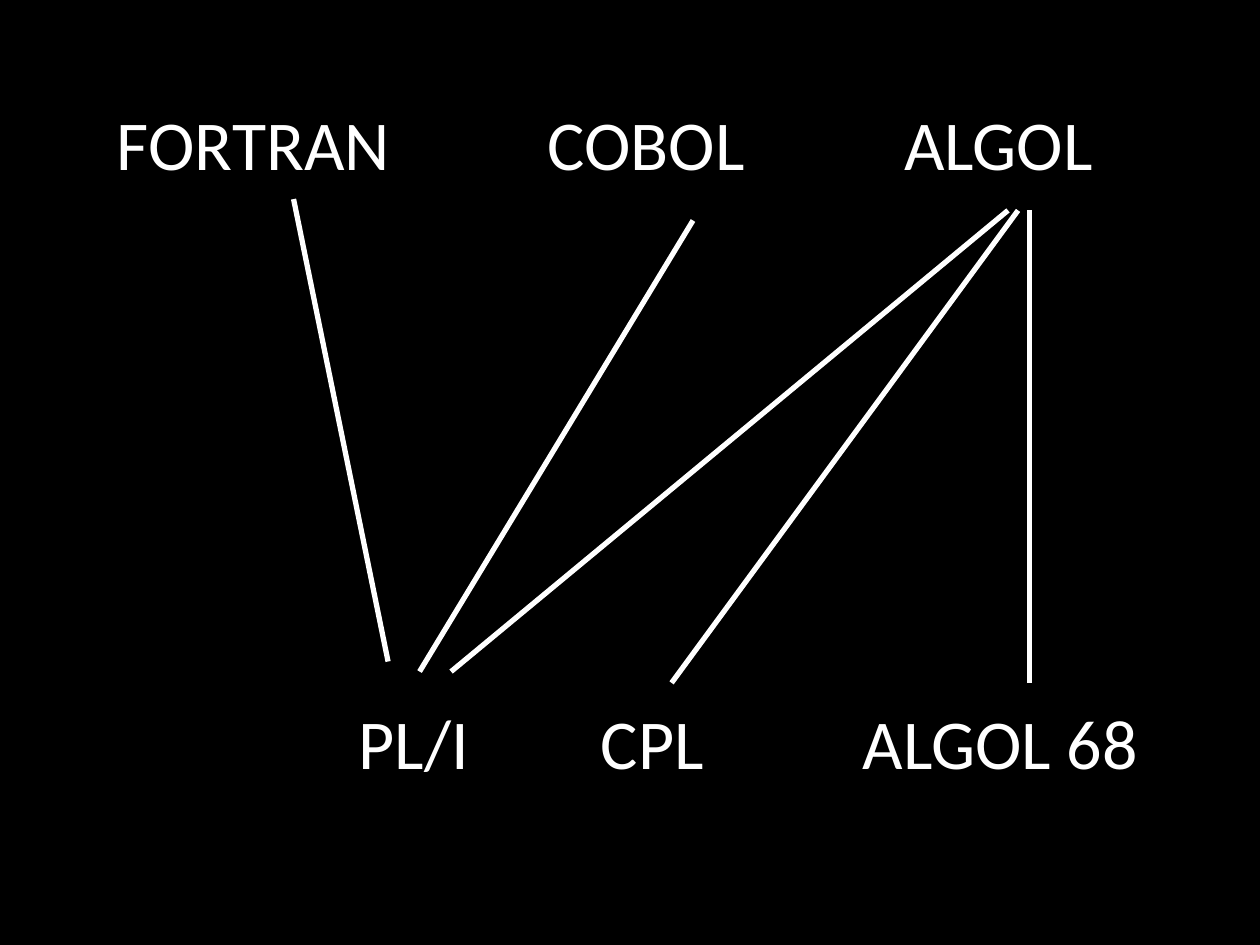
import pptx
import pptx.util
import pptx.dml.color
import pptx.enum.shapes
import pptx.enum.text
import pptx.oxml.ns
import lxml.etree

Inches = pptx.util.Inches
BLACK = pptx.dml.color.RGBColor(0, 0, 0)
WHITE = pptx.dml.color.RGBColor(255, 255, 255)

deck = pptx.Presentation()
deck.slide_width = Inches(10)
deck.slide_height = Inches(7.5)
slide = deck.slides.add_slide(deck.slide_layouts[6])
slide.background.fill.solid()
slide.background.fill.fore_color.rgb = BLACK

top, low = 0.75, 5.5
names = [
    ("FORTRAN", 0.83, top, 2.88),
    ("COBOL", 4.25, top, 2.14),
    ("ALGOL", 7.08, top, 2.09),
    ("PL/I", 2.75, low, 1.27),
    ("CPL", 4.67, low, 1.26),
    ("ALGOL 68", 6.75, low, 2.86),
]
for name, x, y, width in names:
    box = slide.shapes.add_textbox(Inches(x), Inches(y), Inches(width), Inches(0.77))
    frame = box.text_frame
    frame.word_wrap = False
    frame.auto_size = pptx.enum.text.MSO_AUTO_SIZE.SHAPE_TO_FIT_TEXT
    frame.text = name
    font = frame.paragraphs[0].runs[0].font
    font.name = "Calibri"
    font.size = pptx.util.Pt(40)
    font.color.rgb = WHITE

links = [
    (2.33, 1.58, 3.08, 5.25),
    (5.5, 1.75, 3.33, 5.33),
    (8, 1.67, 3.58, 5.33),
    (8.08, 1.67, 5.33, 5.42),
    (8.17, 1.67, 8.17, 5.42),
]
for link in links:
    line = slide.shapes.add_connector(
        pptx.enum.shapes.MSO_CONNECTOR.STRAIGHT, *[Inches(n) for n in link]
    )
    line.line.color.rgb = WHITE
    line.line.width = pptx.util.Pt(3)
    props = line._element.spPr
    lxml.etree.SubElement(props, pptx.oxml.ns.qn("a:effectLst"))

deck.save("out.pptx")
